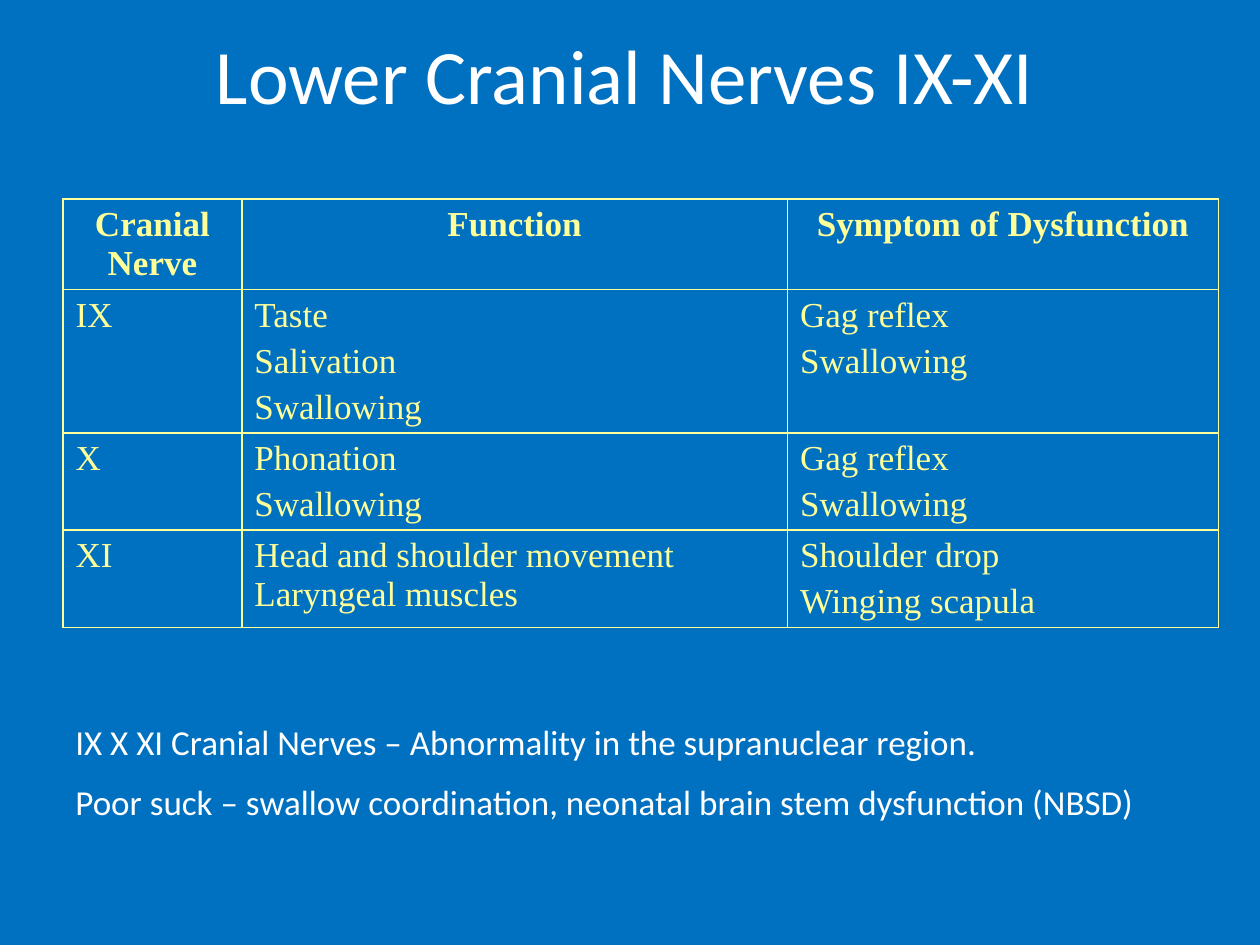
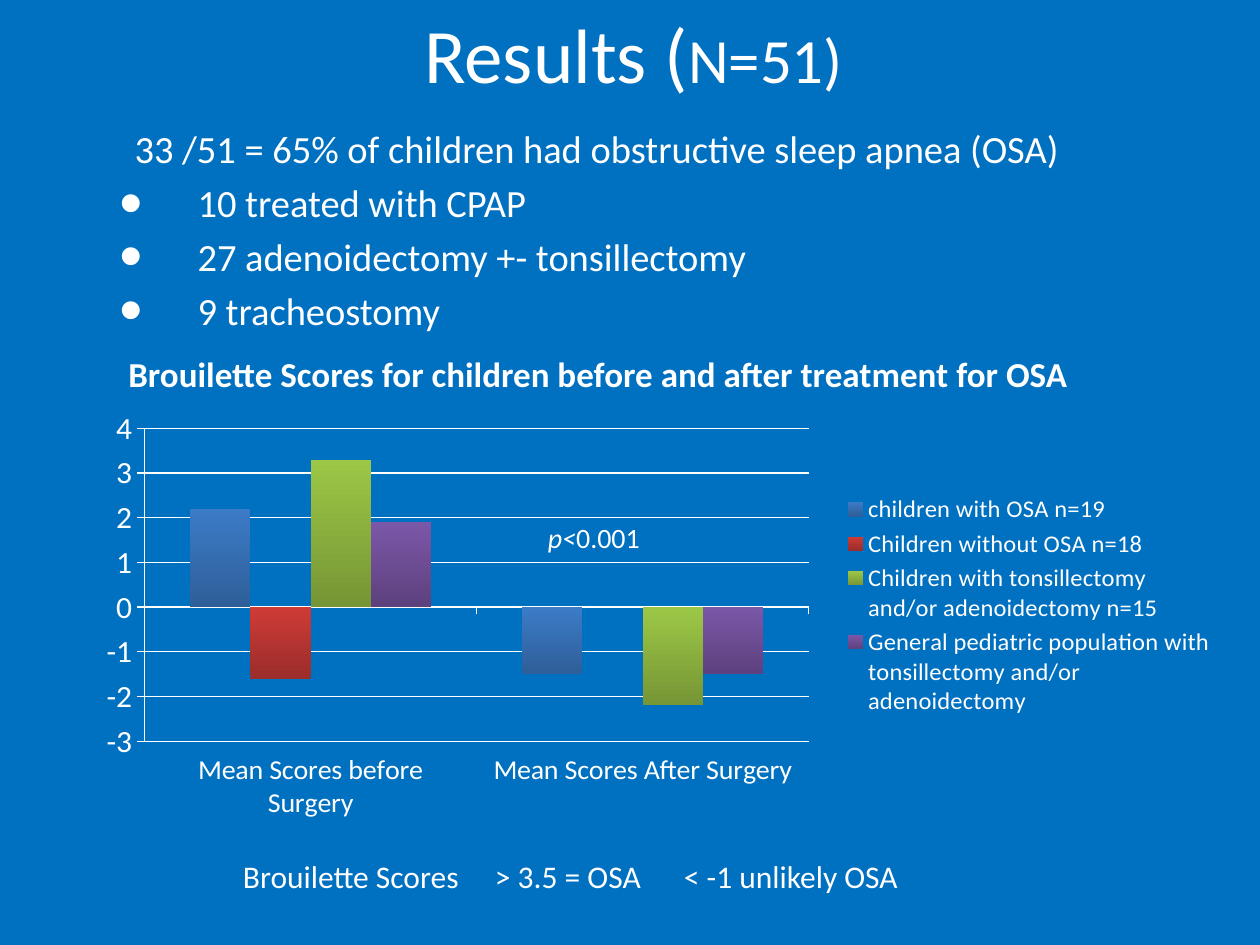
"""Builds two slides on lower cranial nerves and sleep apnea results."""
from dataclasses import dataclass
from typing import NamedTuple

from lxml import etree
from pptx import Presentation
from pptx.chart.data import CategoryChartData
from pptx.dml.color import RGBColor
from pptx.enum import chart as ch, text
from pptx.oxml import parse_xml
from pptx.oxml.ns import nsdecls, qn
from pptx.util import Inches, Pt

BLUE = RGBColor(0x00, 0x70, 0xC0)
WHITE = RGBColor(0xFF, 0xFF, 0xFF)
YELLOW = RGBColor(0xFF, 0xFF, 0x99)
SERIES_COLOURS = [
    (RGBColor(0x3C, 0x7B, 0xC7), RGBColor(0x2E, 0x5F, 0x99)),
    (RGBColor(0xCE, 0x3B, 0x37), RGBColor(0x9B, 0x2D, 0x2A)),
    (RGBColor(0x9C, 0xC7, 0x46), RGBColor(0x76, 0x95, 0x35)),
    (RGBColor(0x7B, 0x57, 0xA8), RGBColor(0x5D, 0x41, 0x7E)),
]
BODY_FONT = "Calibri"
TABLE_FONT = "Times New Roman"
LEFT, CENTER = text.PP_ALIGN.LEFT, text.PP_ALIGN.CENTER


class Run(NamedTuple):
    """A stretch of text in one style."""
    words: str
    size: float
    bold: bool = False
    italic: bool = False
    font: str = BODY_FONT
    colour: RGBColor = WHITE


@dataclass
class Para:
    """A paragraph with its layout; lengths in inches, spacing in points."""
    runs: list[Run]
    align: text.PP_ALIGN = LEFT
    before: float = 0
    margin: float = 0
    hanging: float = 0
    bullet: bool = False
    tabs: tuple[float, ...] = ()


@dataclass
class Box:
    """A text box; lengths in inches."""
    left: float
    top: float
    width: float
    height: float
    paras: list[Para]
    anchor: text.MSO_ANCHOR = text.MSO_ANCHOR.TOP
    right_inset: float = 0.1


HEADINGS = ["Cranial Nerve", "Function", "Symptom of Dysfunction"]
NERVES = [
    [["IX"], ["Taste", "Salivation", "Swallowing"], ["Gag reflex", "Swallowing"]],
    [["X"], ["Phonation", "Swallowing"], ["Gag reflex", "Swallowing"]],
    [["XI"], ["Head and shoulder movement Laryngeal muscles"],
     ["Shoulder drop", "Winging scapula"]],
]
COLUMN_WIDTHS = [1.42, 4.33, 3.42]
ROW_HEIGHTS = [0.72, 1.13, 0.77, 0.77]
NOTES = [
    "IX X XI Cranial Nerves – Abnormality in the supranuclear region.",
    "Poor suck – swallow coordination, neonatal brain stem dysfunction (NBSD)",
]
TREATMENTS = ["10 treated with CPAP", "27 adenoidectomy +- tonsillectomy",
              "9 tracheostomy"]
PERIODS = ["Mean Scores before Surgery", "Mean Scores After Surgery"]
SCORES = {
    "children with OSA n=19": (2.2, -1.5),
    "Children without OSA n=18": (-1.6, None),
    "Children with tonsillectomy and/or adenoidectomy n=15": (3.3, -2.2),
    "General pediatric population with tonsillectomy and/or adenoidectomy":
        (1.9, -1.5),
}


def add_slide(prs):
    """Add a blank slide with the shared background."""
    s = prs.slides.add_slide(prs.slide_layouts[6])
    s.background.fill.solid()
    s.background.fill.fore_color.rgb = BLUE
    return s


def write_paras(tf, paras: list[Para]) -> None:
    """Write paragraphs into a text frame, run by run."""
    for i, para in enumerate(paras):
        p = tf.add_paragraph() if i else tf.paragraphs[0]
        p.alignment = para.align
        p.space_before = Pt(para.before if i else 0)
        pPr = p._p.get_or_add_pPr()
        pPr.set("marL", str(Inches(para.margin)))
        pPr.set("indent", str(-Inches(para.hanging)))
        if para.bullet:
            etree.SubElement(pPr, qn("a:buSzPct"), val="171000")
            etree.SubElement(pPr, qn("a:buFont"), typeface="Arial")
            etree.SubElement(pPr, qn("a:buChar"), char="•")
        if para.tabs:
            stops = etree.SubElement(pPr, qn("a:tabLst"))
            for stop in para.tabs:
                etree.SubElement(stops, qn("a:tab"), pos=str(Inches(stop)), algn="l")
        for run in para.runs:
            r = p.add_run()
            r.text = run.words
            r.font.name, r.font.size = run.font, Pt(run.size)
            r.font.bold, r.font.italic = run.bold, run.italic
            r.font.color.rgb = run.colour


def add_box(s, box: Box) -> None:
    """Draw a wrapping text box."""
    sp = s.shapes.add_textbox(Inches(box.left), Inches(box.top),
                              Inches(box.width), Inches(box.height))
    tf = sp.text_frame
    tf.word_wrap = True
    tf.vertical_anchor = box.anchor
    tf.margin_right = Inches(box.right_inset)
    write_paras(tf, box.paras)


def add_title(s, left: float, top: float, width: float, runs: list[Run],
              right_inset: float = 0.1) -> None:
    """Draw a centred slide title."""
    add_box(s, Box(left, top, width, 0.84, [Para(runs, CENTER)],
                   right_inset=right_inset))


def fill_cell(cell, lines: list[str], heading: bool) -> None:
    """Write a table cell with yellow borders and no fill."""
    align = CENTER if heading else LEFT
    write_paras(cell.text_frame, [
        Para([Run(line, 20, heading, font=TABLE_FONT, colour=YELLOW)], align, 4)
        for line in lines])
    cell.fill.background()
    tcPr = cell._tc.get_or_add_tcPr()
    for i, side in enumerate(("lnL", "lnR", "lnT", "lnB")):
        tcPr.insert(i, parse_xml(
            f'<a:{side} {nsdecls("a")} w="{Pt(1)}"><a:solidFill>'
            f'<a:srgbClr val="{YELLOW}"/></a:solidFill></a:{side}>'))


def add_nerve_table(s) -> None:
    """Draw the table of nerves, functions and symptoms."""
    rows = [[[heading] for heading in HEADINGS], *NERVES]
    table = s.shapes.add_table(
        len(rows), len(HEADINGS), Inches(0.5), Inches(1.58),
        Inches(sum(COLUMN_WIDTHS)), Inches(sum(ROW_HEIGHTS))).table
    table.first_row = table.horz_banding = False
    for column, width in zip(table.columns, COLUMN_WIDTHS):
        column.width = Inches(width)
    for row, height in zip(table.rows, ROW_HEIGHTS):
        row.height = Inches(height)
    for i, row in enumerate(rows):
        for j, lines in enumerate(row):
            fill_cell(table.cell(i, j), lines, i == 0)


def set_font(font, size: float) -> None:
    """Give chart text the shared font and colour."""
    font.name, font.size = BODY_FONT, Pt(size)
    font.color.rgb = WHITE


def place_plot(chart, x: float, y: float, w: float, h: float) -> None:
    """Fix the inner plot area as fractions of the chart."""
    area = chart._chartSpace.find(".//" + qn("c:plotArea"))
    for old in area.findall(qn("c:layout")):
        area.remove(old)
    settings = [("layoutTarget", "inner"), ("xMode", "edge"), ("yMode", "edge"),
                ("x", x), ("y", y), ("w", w), ("h", h)]
    layout = etree.Element(qn("c:layout"))
    manual = etree.SubElement(layout, qn("c:manualLayout"))
    for tag, value in settings:
        etree.SubElement(manual, qn(f"c:{tag}"), val=str(value))
    area.insert(0, layout)


def add_score_chart(s) -> None:
    """Draw the column chart of mean scores."""
    data = CategoryChartData()
    data.categories = PERIODS
    for name, values in SCORES.items():
        data.add_series(name, values)
    chart = s.shapes.add_chart(
        ch.XL_CHART_TYPE.COLUMN_CLUSTERED, Inches(0.5), Inches(3.17),
        Inches(9.25), Inches(3.34), data).chart
    set_font(chart.font, 18)
    chart.has_title = False
    chart.has_legend = True
    chart.legend.position = ch.XL_LEGEND_POSITION.RIGHT
    chart.legend.include_in_layout = False
    set_font(chart.legend.font, 14)
    place_plot(chart, 0.07, 0.07, 0.57, 0.76)

    values, periods = chart.value_axis, chart.category_axis
    values.minimum_scale, values.maximum_scale, values.major_unit = -3, 4, 1
    values.has_major_gridlines = True
    periods.tick_label_position = ch.XL_TICK_LABEL_POSITION.LOW
    for axis, size in ((values, 18), (periods, 16)):
        axis.major_tick_mark = ch.XL_TICK_MARK.OUTSIDE
        set_font(axis.tick_labels.font, size)
    for line in (values.format.line, periods.format.line,
                 values.major_gridlines.format.line):
        line.color.rgb = WHITE
        line.width = Pt(0.75)

    plot = chart.plots[0]
    plot.gap_width, plot.overlap, plot.vary_by_categories = 150, 0, False
    for series, (upper, lower) in zip(plot.series, SERIES_COLOURS):
        series.invert_if_negative = False
        fill = series.format.fill
        fill.gradient()
        fill.gradient_angle = 90
        for stop, colour in zip(fill.gradient_stops, (lower, upper)):
            stop.color.rgb = colour


def build_nerves(prs) -> None:
    """Build the cranial nerves slide."""
    s = add_slide(prs)
    add_nerve_table(s)
    add_title(s, 1.17, 0.17, 7.58, [Run("Lower Cranial Nerves IX-XI", 44)])
    add_box(s, Box(0.5, 5.67, 9.17, 0.94,
                   [Para([Run(note, 20)], before=10) for note in NOTES]))


def build_results(prs) -> None:
    """Build the results slide."""
    s = add_slide(prs)
    add_title(s, 0.5, 0, 9, [Run("Results (", 44), Run("N=51)", 36)], 0.04)
    finding = "33 /51 = 65% of children had obstructive sleep apnea (OSA)"
    add_box(s, Box(0, 0.58, 9.17, 2.48, [
        Para([Run(finding, 22)], margin=0.97),
        *(Para([Run(treatment, 22)], before=4.4, margin=1.47, hanging=0.62,
               bullet=True) for treatment in TREATMENTS),
    ], text.MSO_ANCHOR.MIDDLE, 0.04))
    add_box(s, Box(1.83, 6.75, 6.25, 0.4, [
        Para([Run("Brouilette Scores\t> 3.5 = OSA\t< -1 unlikely OSA", 18)],
             tabs=(2, 4.06))]))
    heading = "Brouilette Scores for children before and after treatment for OSA"
    add_box(s, Box(0.92, 2.75, 8.08, 0.44, [Para([Run(heading, 20, bold=True)])]))
    add_score_chart(s)
    add_box(s, Box(4.25, 4.08, 1.5, 0.37, [
        Para([Run("p<", 16, italic=True), Run("0.001", 16)])]))


def main() -> None:
    """Build and save the presentation."""
    prs = Presentation()
    prs.slide_width, prs.slide_height = Inches(10), Inches(7.5)
    build_nerves(prs)
    build_results(prs)
    prs.save("out.pptx")


if __name__ == "__main__":
    main()
